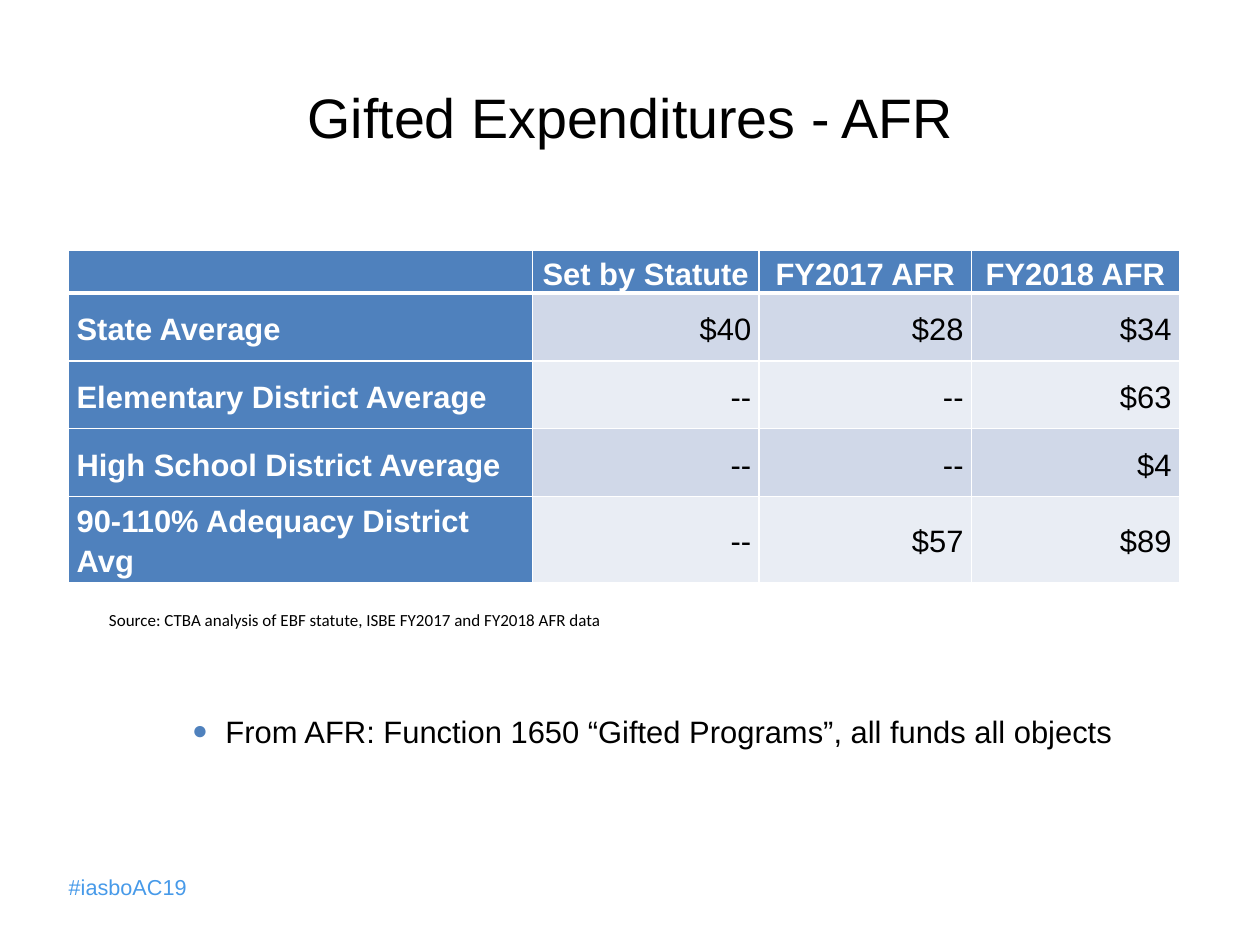
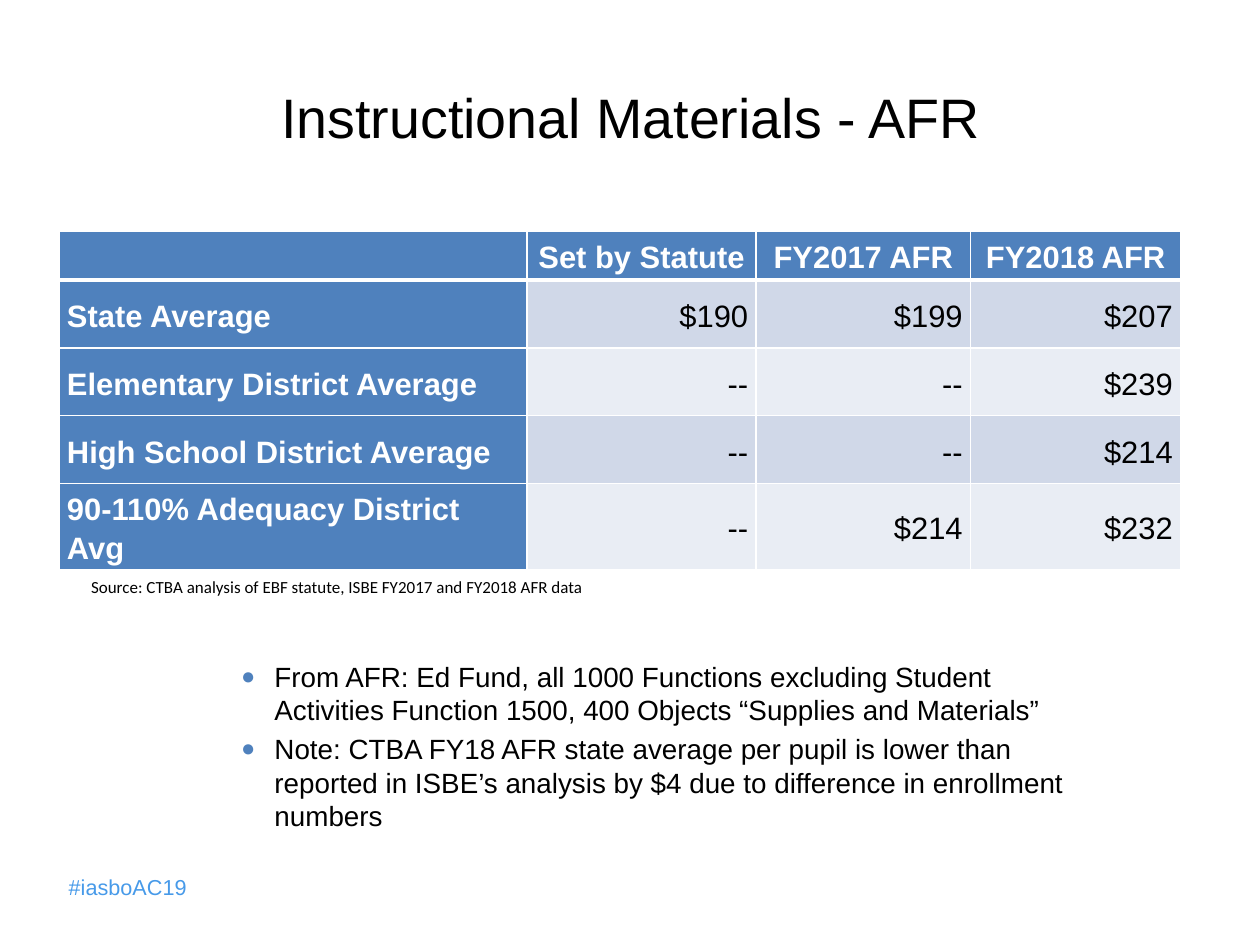
import pptx
import pptx.dml.color
import pptx.enum.text
import pptx.oxml
import pptx.oxml.ns
import pptx.util
from lxml import etree

Cm = pptx.util.Cm
Pt = pptx.util.Pt
ALIGN = pptx.enum.text.PP_ALIGN
MIDDLE = pptx.enum.text.MSO_ANCHOR.MIDDLE
NS = pptx.oxml.ns.nsdecls("a")

BLUE, SKY, WHITE, BLACK = "4F81BD", "479AE9", "FFFFFF", "000000"
BANDS = ["D0D8E8", "E9EDF4"]
HEADS = ["", "Set by Statute", "FY2017 AFR", "FY2018 AFR"]
NAMES = ["State Average", "Elementary District Average",
         "High School District Average", "90-110% Adequacy District Avg"]
SOURCE = "Source: CTBA analysis of EBF statute, ISBE FY2017 and FY2018 AFR data"


def paint(target, color):
    """Give a fill or a font a solid colour."""
    if hasattr(target, "solid"):
        target.solid()
        target.fore_color.rgb = pptx.dml.color.RGBColor.from_string(color)
    else:
        target.color.rgb = pptx.dml.color.RGBColor.from_string(color)


def write(frame, text, size=20, color=BLACK, font="Arial", bold=False,
          align=ALIGN.LEFT, leading=None, bullet=False, gap=0):
    """Fill a text frame, one paragraph for each line of text."""
    frame.word_wrap = True
    for i, line in enumerate(text.split("\n")):
        para = frame.add_paragraph() if i else frame.paragraphs[0]
        para.alignment = align
        para.line_spacing = leading
        if i:
            para.space_before = Pt(gap)
        if bullet:
            props = para._p.get_or_add_pPr()
            props.set("marL", str(Cm(0.76)))
            props.set("indent", str(-Cm(0.76)))
            for tag in (f'<a:buClr {NS}><a:srgbClr val="{BLUE}"/></a:buClr>',
                        f'<a:buSzPct {NS} val="85000"/>',
                        f'<a:buFont {NS} typeface="Arial"/>',
                        f'<a:buChar {NS} char="●"/>'):
                props.append(pptx.oxml.parse_xml(tag))
        run = para.add_run()
        run.text = line
        run.font.name = font
        run.font.size = Pt(size)
        run.font.bold = bold
        paint(run.font, color)


pages = [
    dict(title="Gifted Expenditures - AFR",
         at=(1.57, 5.72), cols=[10.59, 5.18, 4.85, 4.75], head=0.97,
         rows=[["$40", "$28", "$34"], ["--", "--", "$63"],
               ["--", "--", "$4"], ["--", "$57", "$89"]],
         source=(2.24, 13.74), notes=(4.14, 16.15, 21.69, 1.91), size=20,
         text="From AFR: Function 1650 “Gifted Programs”, all funds all objects"),
    dict(title="Instructional Materials - AFR",
         at=(1.35, 5.28), cols=[10.69, 5.23, 4.9, 4.8], head=1.12,
         rows=[["$190", "$199", "$207"], ["--", "--", "$239"],
               ["--", "--", "$214"], ["--", "$214", "$232"]],
         source=(1.83, 12.98), notes=(5.26, 14.95, 19.89, 2.97), size=18,
         text="From AFR: Ed Fund, all 1000 Functions excluding Student Activities "
              "Function 1500, 400 Objects “Supplies and Materials”\n"
              "Note: CTBA FY18 AFR state average per pupil is lower than reported in "
              "ISBE’s analysis by $4 due to difference in enrollment numbers"),
]

deck = pptx.Presentation()
deck.slide_width, deck.slide_height = Cm(28.78), Cm(21.59)

for page in pages:
    slide = deck.slides.add_slide(deck.slide_layouts[5])
    shapes = slide.shapes

    title = shapes.title
    title.left, title.top = Cm(1.45), Cm(0.86)
    title.width, title.height = Cm(25.91), Cm(3.61)
    title.text_frame.vertical_anchor = MIDDLE
    write(title.text_frame, page["title"], size=36, align=ALIGN.CENTER)

    tag = shapes.add_textbox(Cm(1.32), Cm(19.84), Cm(3.6), Cm(0.86))
    write(tag.text_frame, "#iasboAC19", size=14, color=SKY)

    tall = [page["head"], 1.55, 1.55, 1.55, 1.96]
    left, top = page["at"]
    grid = shapes.add_table(5, 4, Cm(left), Cm(top),
                            Cm(sum(page["cols"])), Cm(sum(tall))).table
    for col, width in zip(grid.columns, page["cols"]):
        col.width = Cm(width)
    for row, height in zip(grid.rows, tall):
        row.height = Cm(height)

    body = [[name] + vals for name, vals in zip(NAMES, page["rows"])]
    for r, line in enumerate([HEADS] + body):
        for c, text in enumerate(line):
            cell = grid.cell(r, c)
            cell.margin_left = cell.margin_right = Cm(0.18)
            cell.margin_top = cell.margin_bottom = 0
            cell.vertical_anchor = MIDDLE
            props = cell._tc.get_or_add_tcPr()
            for side in "LRTB":
                thick = (r, side) in [(0, "B"), (1, "T")]
                edge = etree.SubElement(props, pptx.oxml.ns.qn("a:ln" + side),
                                        w=str(Pt(3 if thick else 1)))
                fill = etree.SubElement(edge, pptx.oxml.ns.qn("a:solidFill"))
                etree.SubElement(fill, pptx.oxml.ns.qn("a:srgbClr"), val=WHITE)
            label = r == 0 or c == 0
            paint(cell.fill, BLUE if label else BANDS[(r - 1) % 2])
            align = ALIGN.CENTER if r == 0 else ALIGN.RIGHT if c else ALIGN.LEFT
            if text:
                write(cell.text_frame, text, color=WHITE if label else BLACK,
                      bold=label, align=align, leading=1.15)

    left, top = page["source"]
    source = shapes.add_textbox(Cm(left), Cm(top), Cm(12.7), Cm(0.79))
    write(source.text_frame, SOURCE, size=11, font="Calibri", leading=1.15)

    notes = shapes.add_textbox(*[Cm(n) for n in page["notes"]])
    write(notes.text_frame, page["text"], size=page["size"], bullet=True, gap=3.6)

deck.save("out.pptx")
